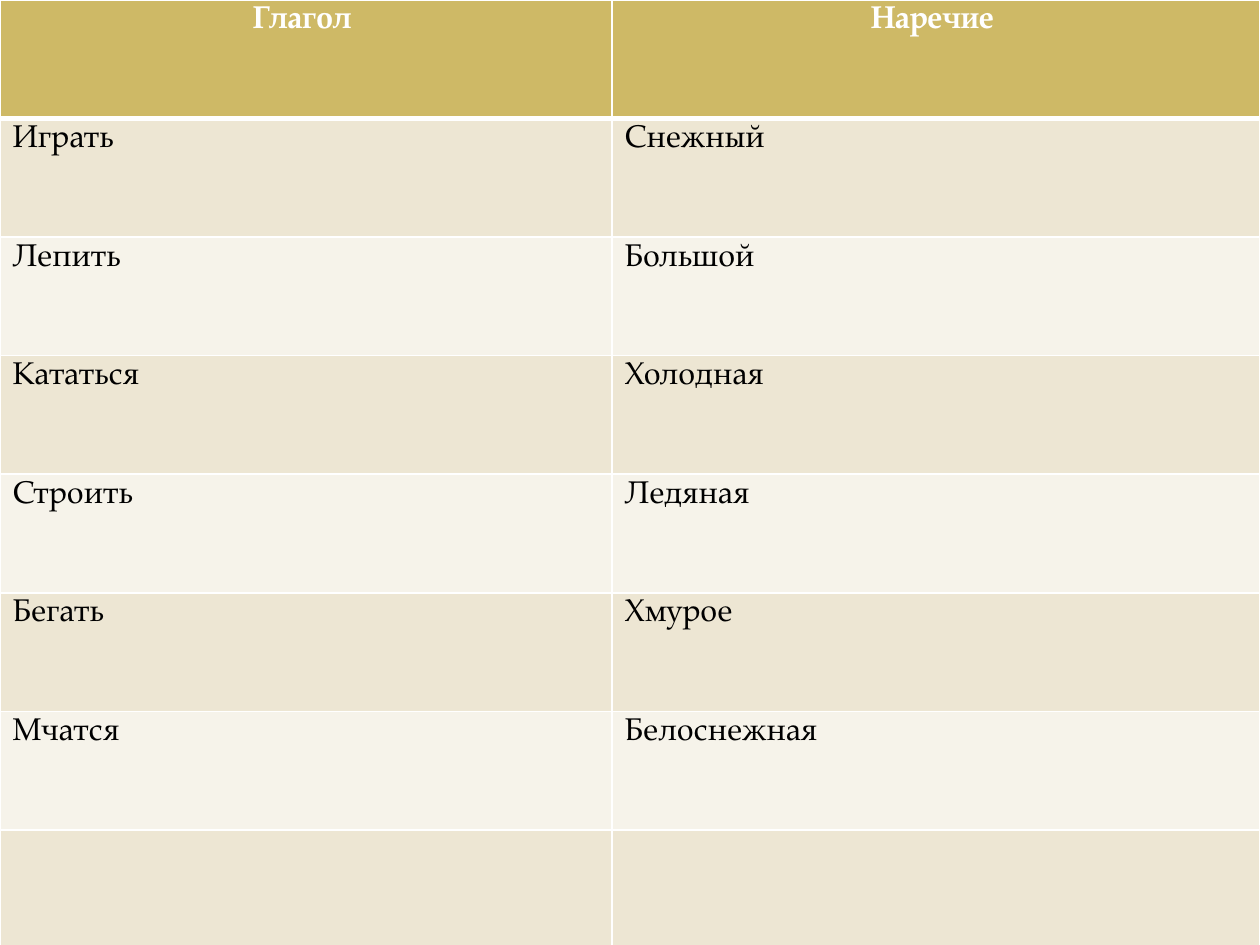
import pptx
import pptx.dml.color
import pptx.enum.text
import pptx.util
import lxml.etree
from pptx.oxml.ns import qn

COLORS = {
    "background": "000000",
    "header": "CEB966",
    "odd": "EDE6D3",
    "even": "F6F3EA",
    "border": "FFFFFF",
    "header_text": "FFFFFF",
    "text": "000000",
}
FONT = "TeX Gyre Pagella"
WORDS = [
    ("Глагол ", "Наречие "),
    ("Играть", "Снежный"),
    ("Лепить", "Большой"),
    ("Кататься", "Холодная"),
    ("Строить", "Ледяная"),
    ("Бегать", "Хмурое"),
    ("Мчатся", "Белоснежная"),
    ("", ""),
]
COLUMN_WIDTHS = [pptx.util.Cm(12.34), pptx.util.Cm(13.06)]
ROW_HEIGHT = pptx.util.Cm(2.39)


def color(name):
    return pptx.dml.color.RGBColor.from_string(COLORS[name])


def add_border(cell, side, points):
    properties = cell._tc.get_or_add_tcPr()
    line = lxml.etree.SubElement(properties, qn("a:ln" + side), w=str(pptx.util.Pt(points)))
    fill = lxml.etree.SubElement(line, qn("a:solidFill"))
    lxml.etree.SubElement(fill, qn("a:srgbClr"), val=COLORS["border"])


# Page
deck = pptx.Presentation()
deck.slide_width = pptx.util.Cm(25.4)
deck.slide_height = pptx.util.Cm(19.05)
page = deck.slides.add_slide(deck.slide_layouts[6])
page.background.fill.solid()
page.background.fill.fore_color.rgb = color("background")

# Table grid
table = page.shapes.add_table(
    len(WORDS), len(COLUMN_WIDTHS), 0, 0, sum(COLUMN_WIDTHS), ROW_HEIGHT * len(WORDS)
).table
for column, width in zip(table.columns, COLUMN_WIDTHS):
    column.width = width
for row in table.rows:
    row.height = ROW_HEIGHT

# Cells
for row_index, words in enumerate(WORDS):
    is_header = row_index == 0
    shade = "header" if is_header else "odd" if row_index % 2 else "even"
    for column_index, word in enumerate(words):
        cell = table.cell(row_index, column_index)
        for side in "LRTB":
            thick = (is_header and side == "B") or (row_index == 1 and side == "T")
            add_border(cell, side, 3 if thick else 1)
        cell.fill.solid()
        cell.fill.fore_color.rgb = color(shade)

        cell.text = word
        para = cell.text_frame.paragraphs[0]
        if is_header:
            para.alignment = pptx.enum.text.PP_ALIGN.CENTER
        para.font.name = FONT
        para.font.size = pptx.util.Pt(18)
        para.font.bold = is_header
        para.font.color.rgb = color("header_text" if is_header else "text")

deck.save("out.pptx")
